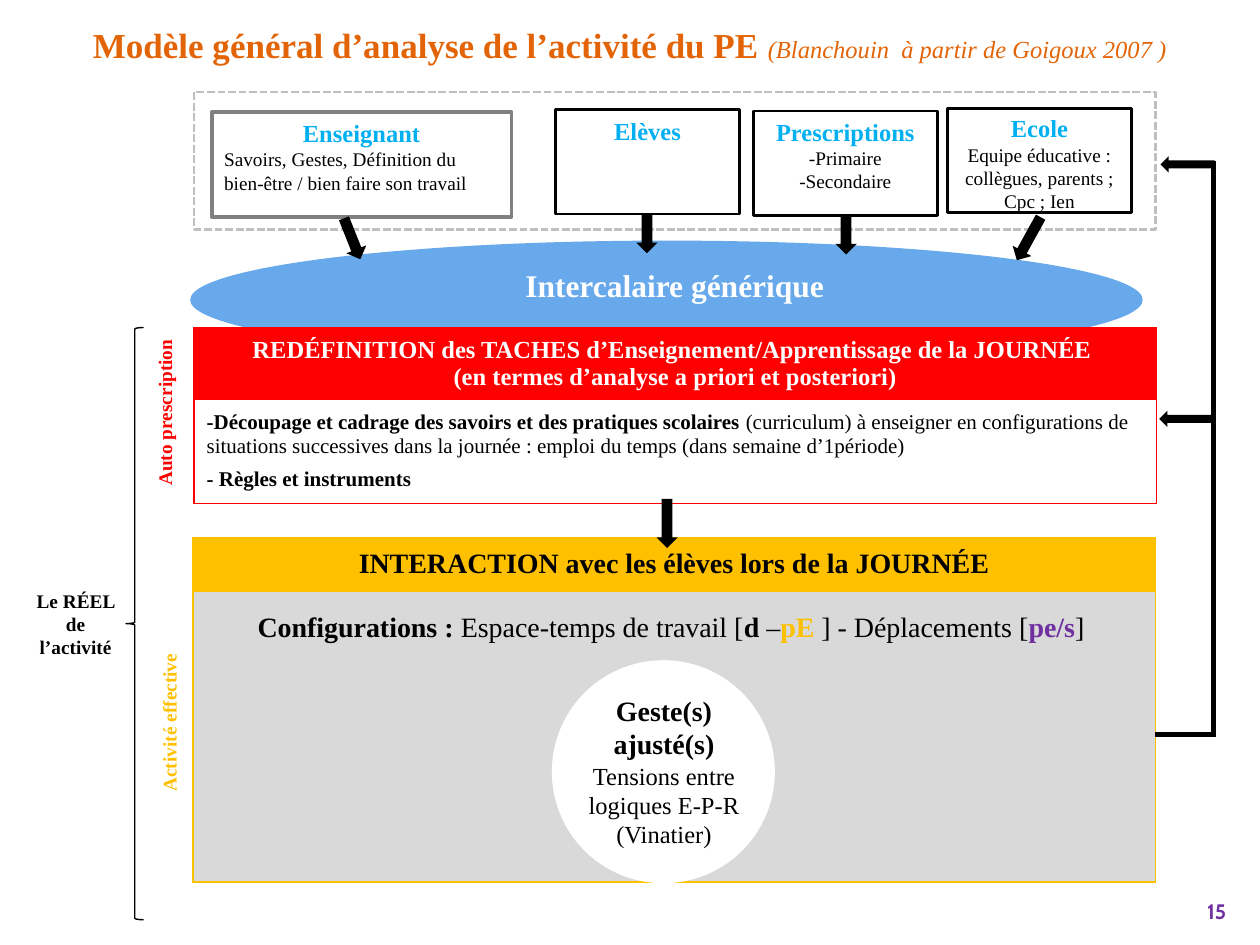
from lxml import etree
from pptx import Presentation
from pptx.dml.color import RGBColor
from pptx.enum.dml import MSO_LINE
from pptx.enum.shapes import MSO_CONNECTOR, MSO_SHAPE
from pptx.enum.text import MSO_ANCHOR, PP_ALIGN
from pptx.oxml import parse_xml
from pptx.oxml.ns import nsdecls, qn
from pptx.util import Inches, Pt

BLACK = RGBColor(0, 0, 0)
WHITE = RGBColor(255, 255, 255)
RED = RGBColor(255, 0, 0)
AMBER = RGBColor(0xFF, 0xC0, 0)
ORANGE = RGBColor(0xE3, 0x64, 0x06)
PURPLE = RGBColor(0x70, 0x30, 0xA0)
CYAN = RGBColor(0, 0xB0, 0xF0)
BLUE = RGBColor(0x67, 0xA9, 0xEB)
GRAY = RGBColor(0x80, 0x80, 0x80)
SILVER = RGBColor(0xBF, 0xBF, 0xBF)
LIGHT = RGBColor(0xD9, 0xD9, 0xD9)
SERIF = "Times New Roman"
LEFT, CENTER, RIGHT = PP_ALIGN.LEFT, PP_ALIGN.CENTER, PP_ALIGN.RIGHT
INSETS = (0.1, 0.05, 0.1, 0.05)
NARROW = (0.04, 0.04, 0.04, 0.04)


def add_run(p, text, size, color=BLACK, bold=False, italic=False, font=SERIF):
    r = p.add_run()
    r.text = text
    r.font.name, r.font.size = font, Pt(size)
    r.font.bold, r.font.italic = bold, italic
    r.font.color.rgb = color


def write(tf, *paras, anchor=MSO_ANCHOR.TOP, insets=INSETS):
    tf.word_wrap = True
    tf.vertical_anchor = anchor
    tf.margin_left, tf.margin_top, tf.margin_right, tf.margin_bottom = map(Inches, insets)
    for i, (align, *runs) in enumerate(paras):
        p = tf.paragraphs[0] if i == 0 else tf.add_paragraph()
        p.alignment = align
        for run in runs:
            add_run(p, *run)


def add_text(shapes, x, y, w, h, *paras, rotation=0, **options):
    sp = shapes.add_textbox(*map(Inches, (x, y, w, h)))
    sp.rotation = rotation
    write(sp.text_frame, *paras, **options)


def add_shape(shapes, kind, x, y, w, h, fill=None, line=None, width=1.5, rotation=0):
    sp = shapes.add_shape(kind, *map(Inches, (x, y, w, h)))
    sp.shadow.inherit = False
    sp.rotation = rotation
    if fill is None:
        sp.fill.background()
    else:
        sp.fill.solid()
        sp.fill.fore_color.rgb = fill
    if line is None:
        sp.line.fill.background()
    else:
        sp.line.color.rgb, sp.line.width = line, Pt(width)
    return sp


def add_arrow(s, x, y, w, h, rotation=0):
    add_shape(s.shapes, MSO_SHAPE.DOWN_ARROW, x, y, w, h, BLACK, rotation=rotation)


def add_line(s, x1, y1, x2, y2):
    line = s.shapes.add_connector(MSO_CONNECTOR.STRAIGHT, *map(Inches, (x1, y1, x2, y2)))
    line.line.color.rgb, line.line.width = BLACK, Pt(3)
    etree.SubElement(line._element.spPr, qn("a:effectLst"))


def add_table(s, x, y, w, heights, fills, border):
    frame = s.shapes.add_table(len(heights), 1, *map(Inches, (x, y, w, sum(heights))))
    table = frame.table
    table.first_row = table.horz_banding = False
    for row, height, fill in zip(table.rows, heights, fills):
        row.height = Inches(height)
        cell = row.cells[0]
        cell.vertical_anchor = MSO_ANCHOR.MIDDLE
        cell.fill.solid()
        cell.fill.fore_color.rgb = fill
        for i, side in enumerate(("lnL", "lnR", "lnT", "lnB")):
            cell._tc.tcPr.insert(i, parse_xml(
                f'<a:{side} {nsdecls("a")} w="12700"><a:solidFill>'
                f'<a:srgbClr val="{border}"/></a:solidFill></a:{side}>'))
    return [row.cells[0].text_frame for row in table.rows]


def add_title(s, x, y, w, h):
    title = s.shapes.title
    title.left, title.top, title.width, title.height = map(Inches, (x, y, w, h))
    write(title.text_frame, (
        CENTER,
        ("Modèle général d’analyse\u00a0de l’activité du PE ".replace("\u00a0", " "), 20, ORANGE, True),
        ("(Blanchouin  à partir de Goigoux 2007 )", 14, ORANGE, False, True)))
    p = title.text_frame.paragraphs[0]
    p.line_spacing, p.space_before, p.space_after = 1.1, Pt(0), Pt(6)


def add_actors(s, x, y, w, h):
    frame = add_shape(s.shapes, MSO_SHAPE.RECTANGLE, x, y, w, h, line=SILVER)
    frame.line.dash_style = MSO_LINE.SQUARE_DOT
    frame.line._ln.find(qn("a:prstDash")).set("val", "sysDash")
    actors = [
        ("Enseignant", 0.14, 0.16, 2.38, GRAY, 2.25, LEFT, INSETS,
         ["Savoirs, Gestes, Définition du bien-être / bien faire son travail"]),
        ("Elèves", 2.87, 0.14, 1.46, BLACK, 1.5, CENTER, INSETS, []),
        ("Prescriptions", 4.44, 0.15, 1.46, BLACK, 1.5, CENTER, INSETS,
         ["-Primaire", "-Secondaire"]),
        ("Ecole", 5.98, 0.13, 1.46, BLACK, 1.5, CENTER, NARROW,
         ["Equipe éducative : collègues, parents ;", "Cpc ; Ien"]),
    ]
    for name, dx, dy, width, color, weight, align, insets, details in actors:
        sp = add_shape(s.shapes, MSO_SHAPE.RECTANGLE, x + dx, y + dy, width, 0.83,
                       line=color, width=weight)
        write(sp.text_frame, (CENTER, (name, 14, CYAN, True)),
              *[(align, (text, 11)) for text in details], insets=insets)
    for dx, dy, length, rotation in ((1.17, 0.99, 0.35, 338.3), (3.51, 0.97, 0.31, 0),
                                     (5.09, 0.98, 0.31, 0), (6.54, 0.97, 0.39, 28.9)):
        add_arrow(s, x + dx, y + dy, 0.17, length, rotation)


def add_interlayer(s, x, y, w, h):
    add_shape(s.shapes, MSO_SHAPE.OVAL, x, y, w, h, BLUE)
    add_text(s.shapes, x + 0.03, y + 0.15, w + 0.07, 0.4,
             (CENTER, ("Intercalaire générique", 18, WHITE, True)))


def add_redefinition(s, x, y, w, h):
    head, body = add_table(s, x, y, w, (0.56, h - 0.56), (RED, WHITE), RED)
    for tf, paras in (
        (head, [
            (CENTER, ("REDÉFINITION des TACHES d’Enseignement/Apprentissage de la JOURNÉE ",
                      14, WHITE, True)),
            (CENTER, ("(en termes d’analyse a priori et posteriori)", 14, WHITE, True))]),
        (body, [
            (LEFT, ("-Découpage et cadrage des savoirs et des pratiques scolaires ", 12, BLACK, True),
             ("(curriculum) à enseigner en configurations de situations successives "
              "dans la journée : emploi du temps (dans semaine d’1période)", 12)),
            (LEFT, ("- Règles et instruments", 12, BLACK, True))]),
    ):
        for i, (align, *runs) in enumerate(paras):
            p = tf.paragraphs[0] if i == 0 else tf.add_paragraph()
            p.alignment = align
            for run in runs:
                add_run(p, *run)
    body.paragraphs[0].space_after = Pt(6)
    add_arrow(s, x + 3.67, y + h - 0.03, 0.17, 0.39)


def add_interaction(s, x, y, w, h):
    head, _ = add_table(s, x, y, w, (0.42, h - 0.42), (AMBER, LIGHT), AMBER)
    p = head.paragraphs[0]
    p.alignment = CENTER
    add_run(p, "INTERACTION avec les élèves lors de la JOURNÉE", 16, BLACK, True)
    add_text(s.shapes, x + 0.1, y + 0.52, w - 0.25, 0.45, (
        CENTER, ("Configurations : ", 16, BLACK, True), ("Espace-temps de travail [", 16),
        ("d", 16, BLACK, True), (" –", 16), ("pE", 16, AMBER, True),
        (" ] - Déplacements [", 16), ("pe/s", 16, PURPLE, True), ("]", 16)))
    group = s.shapes.add_group_shape()
    add_shape(group.shapes, MSO_SHAPE.OVAL, x + 2.85, y + 0.97, 1.77, 1.77, WHITE)
    add_text(group.shapes, x + 2.98, y + 1.14, 1.52, 1.42,
             (CENTER, ("Geste(s) ajusté(s)", 16, BLACK, True)),
             (CENTER, ("Tensions entre logiques E-P-R (Vinatier)", 14)),
             anchor=MSO_ANCHOR.MIDDLE, insets=NARROW)


def add_reality(s, x, y, w, h):
    add_text(s.shapes, x, y, 0.74, h, (CENTER, ("Le RÉEL de l’activité", 11, BLACK, True)),
             anchor=MSO_ANCHOR.MIDDLE, insets=NARROW)
    add_shape(s.shapes, MSO_SHAPE.LEFT_BRACE, x + 0.77, y, 0.14, h, line=BLACK, width=0.79)
    for label, color, dx, dy, length in (("Auto prescription", RED, 0.4, 0.53, 1.36),
                                         ("Activité effective", AMBER, -0.35, 2.99, 2.93)):
        add_text(s.shapes, x + dx, y + dy, length, 0.29,
                 (CENTER, (label, 11, color, True)), rotation=270)


def add_feedback(s, x, y, w, h):
    add_line(s, x + w, y, x + w, y + h)
    add_line(s, x, y + h - 0.02, x + w, y + h - 0.02)
    for dx, dy in ((0.19, -0.19), (0.18, 1.83)):
        add_arrow(s, x + dx, y + dy, 0.13, 0.43, 90)


def main():
    prs = Presentation()
    prs.slide_width, prs.slide_height = Inches(10), Inches(7.5)
    s = prs.slides.add_slide(prs.slide_layouts[5])
    add_title(s, 0, 0.1, 10, 0.47)
    add_interlayer(s, 1.51, 1.91, 7.56, 0.94)
    add_actors(s, 1.54, 0.73, 7.63, 1.09)
    add_interaction(s, 1.53, 4.27, 7.64, 2.73)
    add_redefinition(s, 1.54, 2.6, 7.64, 1.39)
    add_reality(s, 0.23, 2.6, 1.31, 4.7)
    add_feedback(s, 9.17, 1.28, 0.46, 4.57)
    add_text(s.shapes, 9, 7.08, 0.83, 0.27,
             (RIGHT, ("15", 12, PURPLE, True, False, "Cabin")), insets=INSETS)
    prs.save("out.pptx")


if __name__ == "__main__":
    main()
